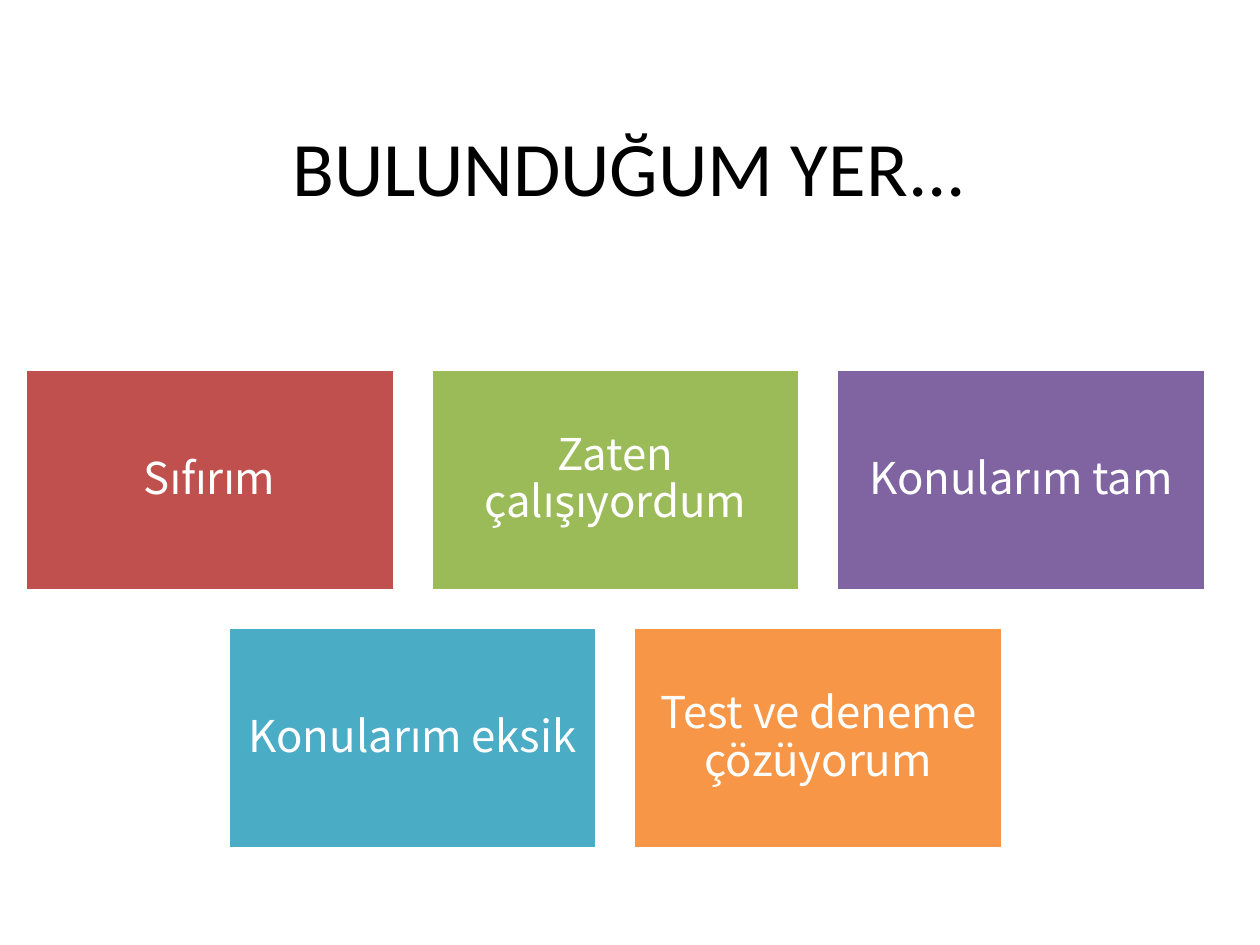
from dataclasses import dataclass

from pptx import Presentation
from pptx.dml.color import RGBColor
from pptx.enum.shapes import MSO_SHAPE
from pptx.enum.text import MSO_ANCHOR, PP_ALIGN
from pptx.util import Inches, Pt


@dataclass(frozen=True)
class Theme:
    title_font: str = "Calibri"
    card_font: str = "Noto Sans CJK JP"
    title_size: int = 44
    card_size: int = 25
    ink: str = "000000"
    paper: str = "FFFFFF"
    red: str = "C0504D"
    green: str = "9BBB59"
    purple: str = "8064A2"
    blue: str = "4BACC6"
    orange: str = "F79646"


THEME = Theme()
COLUMNS = 3
CARD_WIDTH, CARD_HEIGHT, GAP = 2.93, 1.76, 0.29
GRID_LEFT, GRID_TOP = 0.2, 2.93

CARD_ROWS = [
    [("Sıfırım", THEME.red),
     ("Zaten çalışıyordum", THEME.green),
     ("Konularım tam", THEME.purple)],
    [("Konularım eksik", THEME.blue),
     ("Test ve deneme çözüyorum", THEME.orange)],
]


def write_centred(shape, text, font, size, color, line_spacing=1.0):
    frame = shape.text_frame
    frame.word_wrap = True
    frame.vertical_anchor = MSO_ANCHOR.MIDDLE
    para = frame.paragraphs[0]
    para.alignment = PP_ALIGN.CENTER
    para.line_spacing = line_spacing
    span = para.add_run()
    span.text = text
    span.font.name = font
    span.font.size = Pt(size)
    span.font.color.rgb = RGBColor.from_string(color)
    return frame


def add_title(page, text):
    box = page.shapes.add_textbox(Inches(0.5), Inches(0.3), Inches(9), Inches(2.03))
    write_centred(box, text, THEME.title_font, THEME.title_size, THEME.ink)


def add_card(page, column, row, text, color):
    """Place a card on the grid; column may be fractional."""
    left = GRID_LEFT + column * (CARD_WIDTH + GAP)
    top = GRID_TOP + row * (CARD_HEIGHT + GAP)
    card = page.shapes.add_shape(
        MSO_SHAPE.RECTANGLE,
        Inches(left), Inches(top), Inches(CARD_WIDTH), Inches(CARD_HEIGHT))
    card.shadow.inherit = False
    card.fill.solid()
    card.fill.fore_color.rgb = RGBColor.from_string(color)
    card.line.color.rgb = RGBColor.from_string(THEME.paper)
    card.line.width = Pt(2)
    frame = write_centred(card, text, THEME.card_font, THEME.card_size,
                          THEME.paper, line_spacing=0.9)
    frame.margin_left = frame.margin_right = Inches(0.1)
    frame.margin_top = frame.margin_bottom = Inches(0.1)


def add_card_rows(page, rows):
    """Centre each row of cards across the grid."""
    for row, cards in enumerate(rows):
        first_column = (COLUMNS - len(cards)) / 2
        for index, (text, color) in enumerate(cards):
            add_card(page, first_column + index, row, text, color)


def main():
    deck = Presentation()
    deck.slide_width, deck.slide_height = Inches(10), Inches(7.5)
    page = deck.slides.add_slide(deck.slide_layouts[6])
    add_title(page, "BULUNDUĞUM YER...")
    add_card_rows(page, CARD_ROWS)
    deck.save("out.pptx")


if __name__ == "__main__":
    main()
